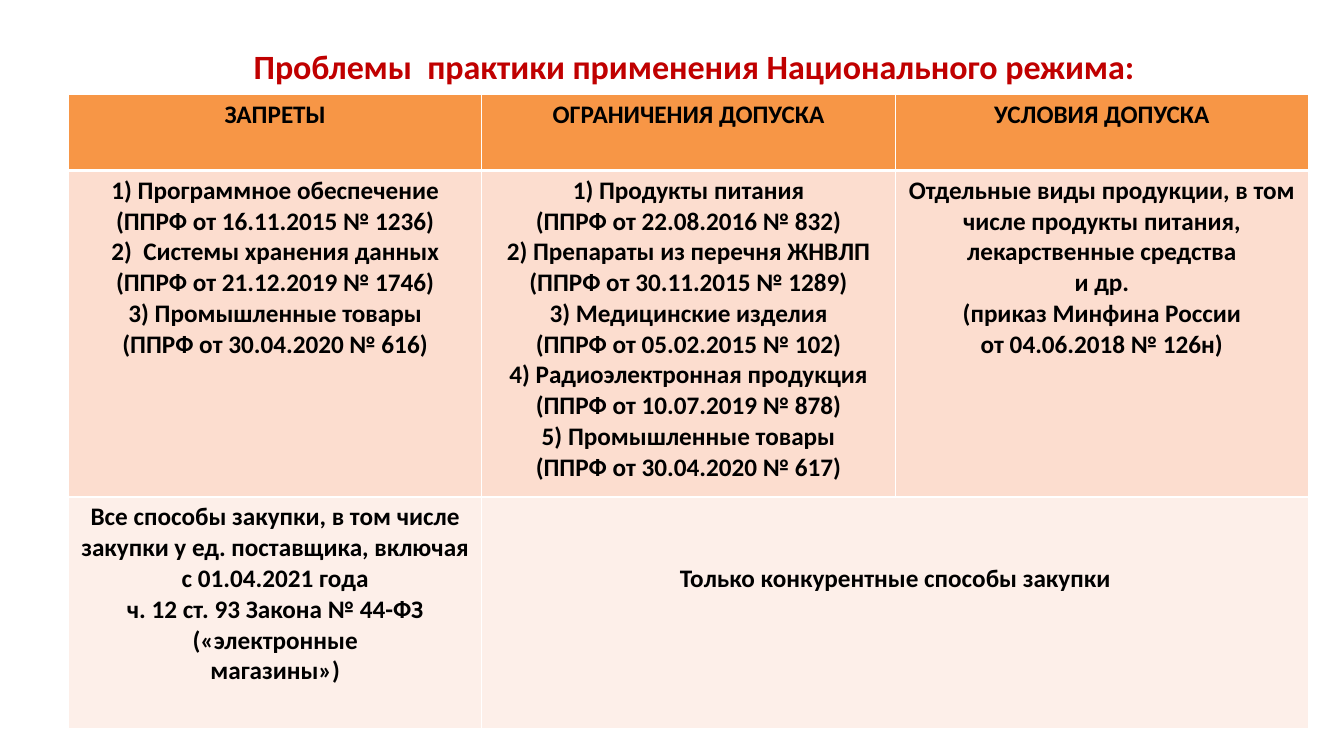
from dataclasses import dataclass

from lxml.etree import SubElement
from pptx import Presentation
from pptx.dml.color import RGBColor
from pptx.enum.text import MSO_ANCHOR as Anchor, MSO_AUTO_SIZE as AutoSize, PP_ALIGN as Align
from pptx.oxml.ns import qn
from pptx.util import Inches, Pt

TITLE = "Проблемы  практики применения Национального режима:"
HEADERS = ["ЗАПРЕТЫ", "ОГРАНИЧЕНИЯ ДОПУСКА", "УСЛОВИЯ ДОПУСКА"]
PRODUCTS = [
    [
        "1) Программное обеспечение",
        "(ППРФ от 16.11.2015 № 1236)",
        "2)  Системы хранения данных",
        "(ППРФ от 21.12.2019 № 1746)",
        "3) Промышленные товары",
        "(ППРФ от 30.04.2020 № 616)",
    ],
    [
        "1) Продукты питания",
        "(ППРФ от 22.08.2016 № 832)",
        "2) Препараты из перечня ЖНВЛП",
        "(ППРФ от 30.11.2015 № 1289)",
        "3) Медицинские изделия",
        "(ППРФ от 05.02.2015 № 102)",
        "4) Радиоэлектронная продукция",
        "(ППРФ от 10.07.2019 № 878)",
        "5) Промышленные товары",
        "(ППРФ от 30.04.2020 № 617)",
    ],
    [
        "Отдельные виды продукции, в том числе продукты питания, лекарственные средства",
        "и др.",
        "(приказ Минфина России",
        "от 04.06.2018 № 126н)",
    ],
]
ALL_METHODS = [
    "Все способы закупки, в том числе закупки у ед. поставщика, включая с 01.04.2021 года",
    "ч. 12 ст. 93 Закона № 44-ФЗ («электронные",
    "магазины»)",
]
COMPETITIVE_ONLY = ["Только конкурентные способы закупки"]

ROWS = [[[header] for header in HEADERS], PRODUCTS, [ALL_METHODS, COMPETITIVE_ONLY, []]]
ROW_HEIGHTS = [0.75, 3.24, 2.3]
COLUMN_WIDTH = 4.1
TABLE_LEFT, TABLE_TOP = 0.68, 0.94
COMPETITIVE_MARGIN = 0.66


@dataclass(frozen=True)
class Theme:
    font: str = "Calibri"
    title_size: float = 24.3
    cell_size: float = 18
    title: str = "C00000"
    text: str = "000000"
    border: str = "FFFFFF"
    row_fills: tuple = ("F79646", "FCDDCF", "FDEFE9")


THEME = Theme()


def write_text(frame, lines, *, size, color):
    for index, line in enumerate(lines):
        paragraph = frame.paragraphs[0] if index == 0 else frame.add_paragraph()
        paragraph.alignment = Align.CENTER
        run = paragraph.add_run()
        run.text = line
        run.font.name = THEME.font
        run.font.size = Pt(size)
        run.font.bold = True
        run.font.color.rgb = RGBColor.from_string(color)


def set_borders(cell, **widths):
    """Draw the cell's sides; widths are points by side letter, in the order L, R, T, B."""
    properties = cell._tc.get_or_add_tcPr()
    for side, width in widths.items():
        line = SubElement(properties, qn(f"a:ln{side}"), w=str(Pt(width)))
        SubElement(SubElement(line, qn("a:solidFill")), qn("a:srgbClr"), val=THEME.border)


def add_title(slide):
    title = slide.shapes.title
    title.left, title.top = Inches(0.86), Inches(0.3)
    title.width, title.height = Inches(11.8), Inches(0.56)
    frame = title.text_frame
    frame.auto_size = AutoSize.NONE
    frame.vertical_anchor = Anchor.MIDDLE
    frame.margin_left, frame.margin_right = Inches(0.35), Inches(0.1)
    frame.margin_top, frame.margin_bottom = Inches(0.15), 0
    write_text(frame, [TITLE], size=THEME.title_size, color=THEME.title)


def add_regime_table(slide):
    columns = len(HEADERS)
    table = slide.shapes.add_table(
        len(ROWS), columns, Inches(TABLE_LEFT), Inches(TABLE_TOP),
        Inches(COLUMN_WIDTH * columns), Inches(sum(ROW_HEIGHTS)),
    ).table
    for column in table.columns:
        column.width = Inches(COLUMN_WIDTH)
    for row_index, (row, height) in enumerate(zip(ROWS, ROW_HEIGHTS)):
        table.rows[row_index].height = Inches(height)
        for column_index, lines in enumerate(row):
            cell = table.cell(row_index, column_index)
            set_borders(cell, L=1, R=1, T=3 if row_index == 1 else 1, B=3 if row_index == 0 else 1)
            cell.fill.solid()
            cell.fill.fore_color.rgb = RGBColor.from_string(THEME.row_fills[row_index])
            write_text(cell.text_frame, lines, size=THEME.cell_size, color=THEME.text)
    competitive = table.cell(2, 1)
    competitive.merge(table.cell(2, 2))
    competitive.margin_top = Inches(COMPETITIVE_MARGIN)


def main():
    presentation = Presentation()
    presentation.slide_width, presentation.slide_height = Inches(13.33), Inches(7.5)
    slide = presentation.slides.add_slide(presentation.slide_layouts.get_by_name("Title Only"))
    add_title(slide)
    add_regime_table(slide)
    presentation.save("out.pptx")


if __name__ == "__main__":
    main()
